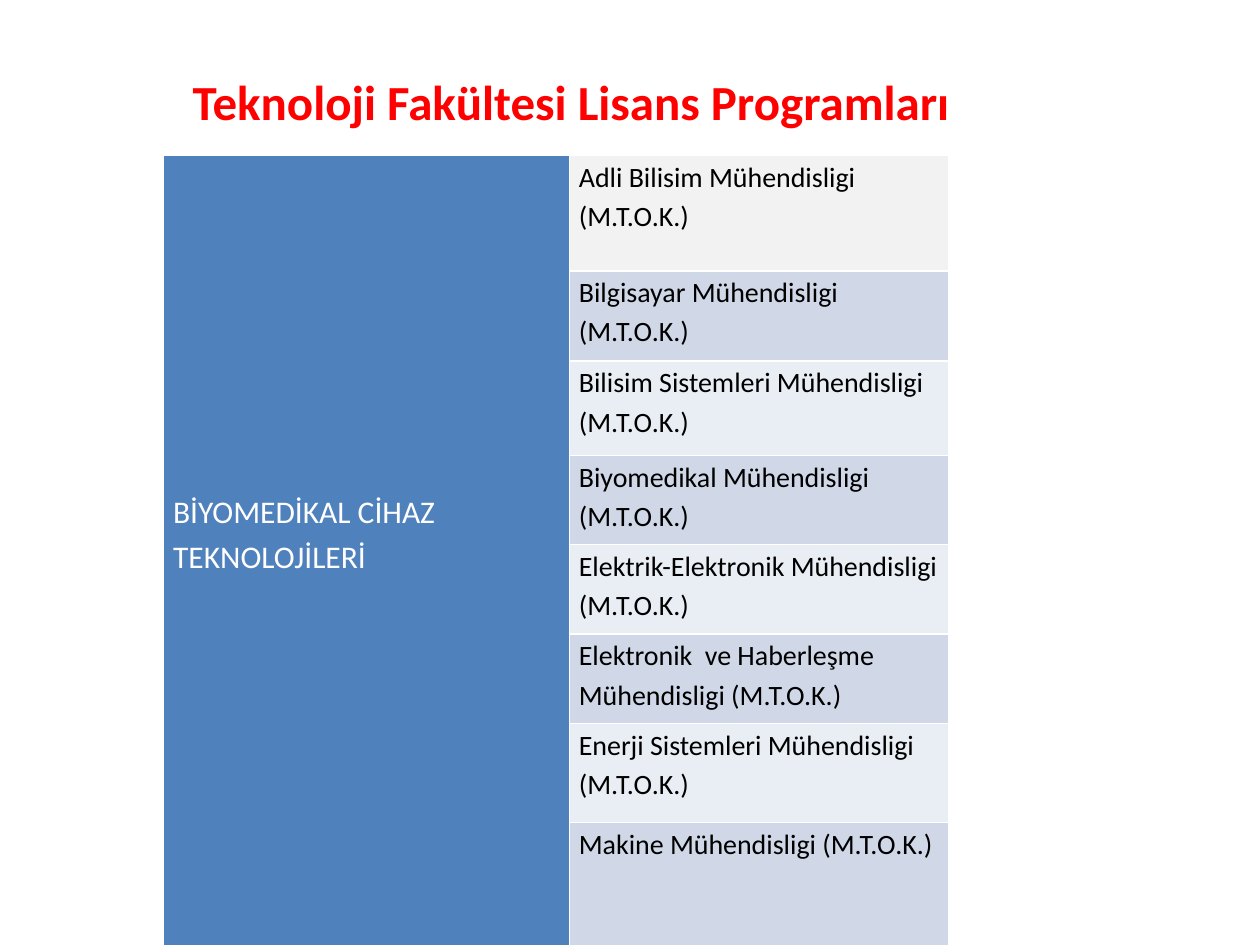
import lxml.etree
import pptx
import pptx.dml.color
import pptx.enum.text
import pptx.oxml.ns
import pptx.util

Cm = pptx.util.Cm
Pt = pptx.util.Pt
ANCHOR = pptx.enum.text.MSO_ANCHOR
ALIGN = pptx.enum.text.PP_ALIGN
COLORS = {
    "title": "FF0000",
    "text": "000000",
    "white": "FFFFFF",
    "department": "4F81BD",
    "first": "F2F2F2",
    "dark": "D0D8E8",
    "light": "E9EDF4",
}
PROGRAMS = [
    ("Adli Bilisim Mühendisligi (M.T.O.K.)", 2.33),
    ("Bilgisayar Mühendisligi (M.T.O.K.)", 1.82),
    ("Bilisim Sistemleri Mühendisligi (M.T.O.K.)", 1.9),
    ("Biyomedikal Mühendisligi (M.T.O.K.)", 1.8),
    ("Elektrik-Elektronik Mühendisligi (M.T.O.K.)", 1.8),
    ("Elektronik  ve Haberleşme Mühendisligi (M.T.O.K.)", 1.8),
    ("Enerji Sistemleri Mühendisligi (M.T.O.K.)", 2),
    ("Makine Mühendisligi (M.T.O.K.)", 2.46),
]


def rgb(name):
    return pptx.dml.color.RGBColor.from_string(COLORS[name])


def write(tf, text, size=16, color="text", bold=False, align=ALIGN.LEFT, spacing=1.0):
    p = tf.paragraphs[0]
    p.alignment = align
    p.line_spacing = spacing
    r = p.add_run()
    r.text = text
    r.font.name = "Calibri"
    r.font.size = Pt(size)
    r.font.bold = bold
    r.font.color.rgb = rgb(color)


class Deck:
    """Hold the table style and the current slide."""

    def __init__(self, s):
        self.s = s
        self.inset = Cm(0.19)
        self.border = Pt(1)
        self.spacing = 1.15

    def title(self, text, left, top, width, height):
        tf = self.s.shapes.add_textbox(Cm(left), Cm(top), Cm(width), Cm(height)).text_frame
        tf.word_wrap = True
        tf.vertical_anchor = ANCHOR.MIDDLE
        write(tf, text, size=28, color="title", bold=True, align=ALIGN.CENTER)

    def cell(self, cell, text, fill, bottom=0, anchor=ANCHOR.TOP, **font):
        cell.margin_left = cell.margin_right = self.inset
        cell.margin_top, cell.margin_bottom = 0, Cm(bottom)
        cell.vertical_anchor = anchor
        write(cell.text_frame, text, spacing=self.spacing, **font)
        self.paint(cell, fill)

    def paint(self, cell, fill):
        cell.fill.solid()
        cell.fill.fore_color.rgb = rgb(fill)
        qn = pptx.oxml.ns.qn
        for i, side in enumerate(("a:lnL", "a:lnR", "a:lnT", "a:lnB")):
            ln = lxml.etree.Element(qn(side), w=str(self.border))
            solid = lxml.etree.SubElement(ln, qn("a:solidFill"))
            lxml.etree.SubElement(solid, qn("a:srgbClr"), val=COLORS["white"])
            cell._tc.get_or_add_tcPr().insert(i, ln)

    def table(self, department, programs, left, top, widths):
        height = sum(h for _, h in programs)
        table = self.s.shapes.add_table(
            len(programs), 2, Cm(left), Cm(top), Cm(sum(widths)), Cm(height)
        ).table
        for column, width in zip(table.columns, widths):
            column.width = Cm(width)
        for i, (program, row_height) in enumerate(programs):
            table.rows[i].height = Cm(row_height)
            fill = "first" if i == 0 else ("light", "dark")[i % 2]
            self.cell(table.cell(i, 1), program, fill)
            if i:
                self.paint(table.cell(i, 0), "department")
        head = table.cell(0, 0)
        head.merge(table.cell(len(programs) - 1, 0))
        self.cell(head, department, "department", bottom=1.33,
                  anchor=ANCHOR.MIDDLE, size=18, color="white")


def main():
    prs = pptx.Presentation()
    prs.slide_width, prs.slide_height = Cm(25.4), Cm(19.05)
    deck = Deck(prs.slides.add_slide(prs.slide_layouts[6]))
    deck.title("Teknoloji Fakültesi Lisans Programları", 2.11, 0.76, 18.8, 2.57)
    deck.table("BİYOMEDİKAL CİHAZ TEKNOLOJİLERİ", PROGRAMS, 3.3, 3.13, (8.18, 7.65))
    prs.save("out.pptx")


if __name__ == "__main__":
    main()
